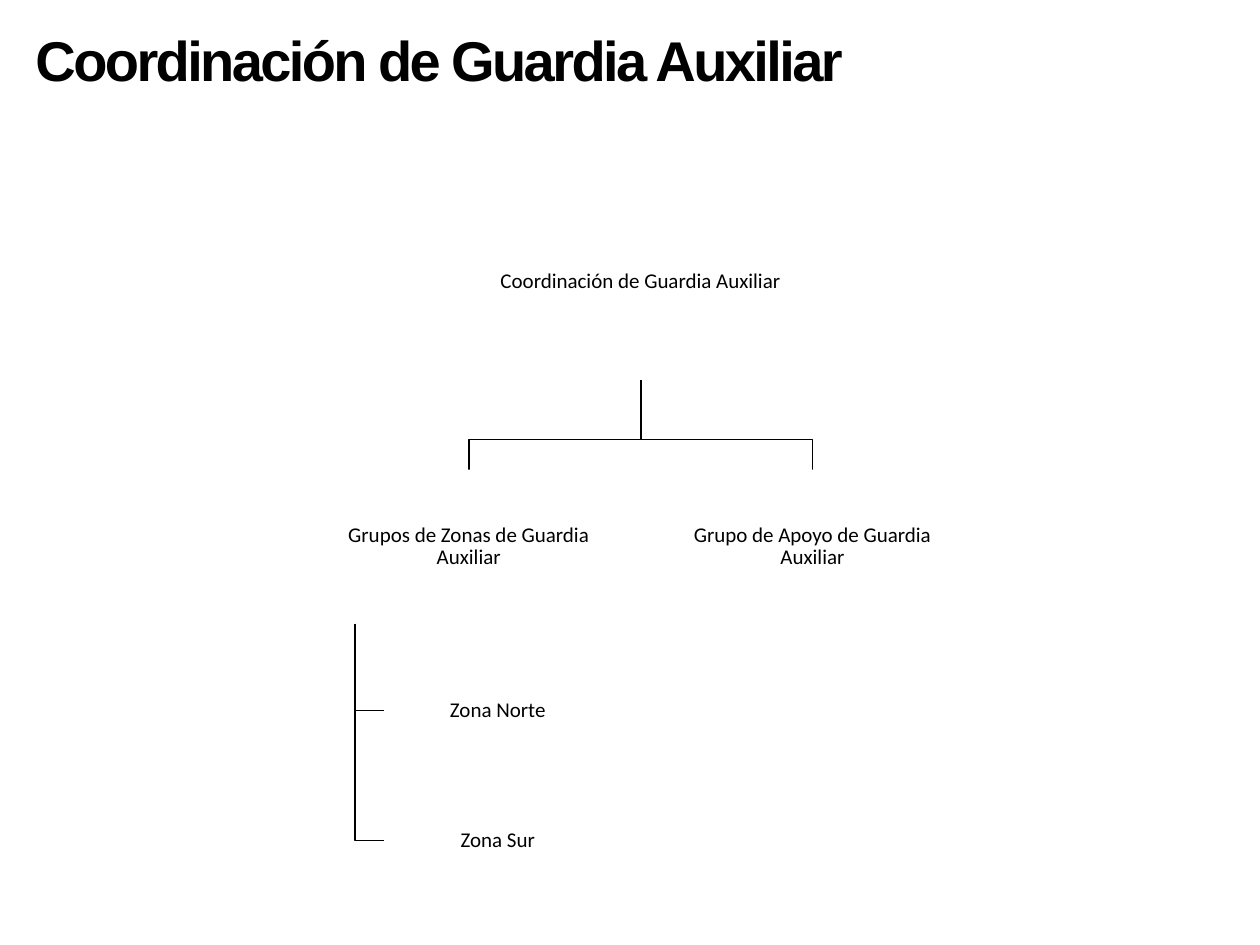
from dataclasses import dataclass

from pptx import Presentation
from pptx.dml.color import RGBColor
from pptx.enum import shapes, text
from pptx.util import Cm, Pt

BLACK = "000000"
WHITE = "FFFFFF"
TITLE = "Coordinación de Guardia Auxiliar"


@dataclass(frozen=True)
class Box:
    label: str
    left: float
    top: float
    width: float
    height: float
    filled: bool = True

    @property
    def center(self) -> float:
        return self.left + self.width / 2

    @property
    def middle(self) -> float:
        return self.top + self.height / 2

    @property
    def bottom(self) -> float:
        return self.top + self.height


def color(value: str) -> RGBColor:
    return RGBColor.from_string(value)


def format_font(font, name: str, size: float, bold: bool = False) -> None:
    font.name = name
    font.size = Pt(size)
    font.bold = bold
    font.color.rgb = color(BLACK)


def draw_title(slide) -> None:
    title = slide.shapes.title
    title.left, title.top, title.width, title.height = Cm(0.46), Cm(0.38), Cm(18.95), Cm(1.63)
    frame = title.text_frame
    frame.text = TITLE
    frame.word_wrap = True
    frame.auto_size = text.MSO_AUTO_SIZE.SHAPE_TO_FIT_TEXT
    frame.vertical_anchor = text.MSO_ANCHOR.TOP
    paragraph = frame.paragraphs[0]
    paragraph.alignment = text.PP_ALIGN.LEFT
    format_font(paragraph.font, "Arial", 32, True)
    paragraph.runs[0]._r.get_or_add_rPr().set("spc", "-150")


def draw_branch(slide, points: list[tuple[float, float]]) -> None:
    corners = [(Cm(x), Cm(y)) for x, y in points]
    builder = slide.shapes.build_freeform(*corners[0])
    builder.add_line_segments(corners[1:], close=False)
    shape = builder.convert_to_shape()
    shape.shadow.inherit = False
    shape.fill.background()
    shape.line.color.rgb = color(BLACK)
    shape.line.width = Pt(1)


def draw_box(slide, box: Box) -> None:
    shape = slide.shapes.add_shape(
        shapes.MSO_SHAPE.RECTANGLE, Cm(box.left), Cm(box.top), Cm(box.width), Cm(box.height)
    )
    shape.shadow.inherit = False
    shape.line.fill.background()
    if box.filled:
        shape.fill.solid()
        shape.fill.fore_color.rgb = color(WHITE)
    else:
        shape.fill.background()
    frame = shape.text_frame
    frame.word_wrap = True
    frame.vertical_anchor = text.MSO_ANCHOR.MIDDLE
    frame.margin_left = frame.margin_right = frame.margin_top = frame.margin_bottom = Cm(0.03)
    frame.text = box.label
    paragraph = frame.paragraphs[0]
    paragraph.alignment = text.PP_ALIGN.CENTER
    paragraph.line_spacing = 0.9
    format_font(paragraph.font, "Calibri", 12)


def main() -> None:
    presentation = Presentation()
    presentation.slide_width, presentation.slide_height = Cm(25.4), Cm(19.05)
    slide = presentation.slides.add_slide(presentation.slide_layouts[5])
    draw_title(slide)

    root = Box(TITLE, 8.93, 3.68, 7.97, 3.99, filled=False)
    groups = [
        Box(f"{label} de Guardia Auxiliar", 6.58 + 6.93 * index, 9.47, 5.74, 3.1)
        for index, label in enumerate(["Grupos de Zonas", "Grupo de Apoyo"])
    ]
    zones = [
        Box(label, 7.75, 13.31 + 2.62 * index, 4.57, 2.03)
        for index, label in enumerate(["Zona Norte", "Zona Sur"])
    ]

    junction = groups[0].top - 0.61
    for group in groups:
        draw_branch(slide, [
            (root.center, root.bottom), (root.center, junction),
            (group.center, junction), (group.center, group.top),
        ])
    trunk = groups[0].left + groups[0].width / 10
    for zone in zones:
        draw_branch(slide, [
            (trunk, groups[0].bottom), (trunk, zone.middle), (zone.left, zone.middle),
        ])
    for box in [root, *groups, *zones]:
        draw_box(slide, box)

    presentation.save("out.pptx")


if __name__ == "__main__":
    main()
